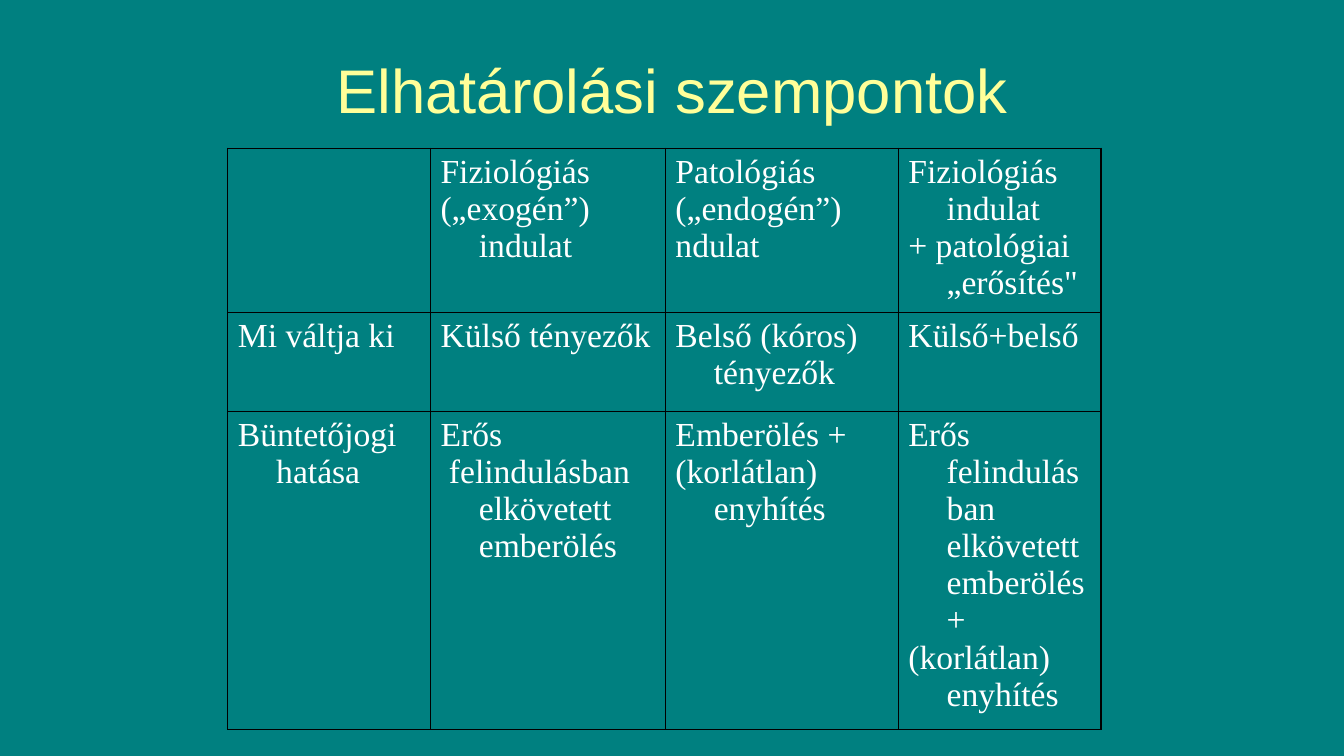
from lxml.etree import SubElement
from pptx import Presentation
from pptx.dml.color import RGBColor
from pptx.enum.text import MSO_ANCHOR, PP_ALIGN
from pptx.oxml.ns import qn
from pptx.util import Inches, Pt

TEAL = RGBColor(0x00, 0x80, 0x80)
YELLOW = RGBColor(0xFF, 0xFF, 0x99)
WHITE = RGBColor(0xFF, 0xFF, 0xFF)
BLACK = RGBColor(0x00, 0x00, 0x00)

# Content: each cell is a list of paragraphs
TITLE = "Elhatárolási szempontok"
ROWS = [
    [
        [],
        ["Fiziológiás", "(„exogén”) indulat"],
        ["Patológiás", "(„endogén”)", "ndulat"],
        ["Fiziológiás indulat", "+ patológiai „erősítés\""],
    ],
    [
        ["Mi váltja ki"],
        ["Külső tényezők"],
        ["Belső (kóros) tényezők"],
        ["Külső+belső"],
    ],
    [
        ["Büntetőjogi hatása"],
        ["Erős", " felindulásban elkövetett emberölés"],
        ["Emberölés +", "(korlátlan) enyhítés"],
        ["Erős felindulásban elkövetett emberölés +", "(korlátlan) enyhítés"],
    ],
]

# Layout in inches
SLIDE_SIZE = (13.33, 7.5)
TITLE_BOX = (2.17, 0.3, 9, 1.17)
TABLE_CORNER = (2.26, 1.47)
COLUMN_WIDTHS = [2.01, 2.33, 2.31, 2.01]
ROW_HEIGHTS = [1.63, 0.98, 3.16]
HANGING_INDENT = Inches(0.38)

TITLE_FONT = {"name": "Arial", "size": Pt(44)}
CELL_FONT = {"name": "Times New Roman", "size": Pt(24)}


def set_font(font, formats, color):
    for name, value in formats.items():
        setattr(font, name, value)
    font.color.rgb = color


def add_borders(cell):
    properties = cell._tc.get_or_add_tcPr()
    for position, side in enumerate(("lnL", "lnR", "lnT", "lnB")):
        line = SubElement(properties, qn(f"a:{side}"), w=str(Pt(1)))
        fill = SubElement(line, qn("a:solidFill"))
        SubElement(fill, qn("a:srgbClr"), val=str(BLACK))
        properties.insert(position, line)


def fill_cell(cell, texts):
    cell.fill.background()
    add_borders(cell)
    frame = cell.text_frame
    frame.text = "\n".join(texts)
    for paragraph in frame.paragraphs:
        set_font(paragraph.font, CELL_FONT, WHITE)
        properties = paragraph._p.get_or_add_pPr()
        properties.set("marL", str(HANGING_INDENT))
        properties.set("indent", str(-HANGING_INDENT))
        for run in paragraph.runs:
            set_font(run.font, CELL_FONT, WHITE)


def add_title(slide):
    frame = slide.shapes.add_textbox(*map(Inches, TITLE_BOX)).text_frame
    frame.word_wrap = True
    frame.vertical_anchor = MSO_ANCHOR.MIDDLE
    paragraph = frame.paragraphs[0]
    paragraph.alignment = PP_ALIGN.CENTER
    run = paragraph.add_run()
    run.text = TITLE
    set_font(run.font, TITLE_FONT, YELLOW)


def add_comparison_table(slide):
    size = (sum(COLUMN_WIDTHS), sum(ROW_HEIGHTS))
    table = slide.shapes.add_table(
        len(ROWS), len(COLUMN_WIDTHS), *map(Inches, TABLE_CORNER + size)
    ).table
    table.first_row = False
    table.horz_banding = False
    for column, width in zip(table.columns, COLUMN_WIDTHS):
        column.width = Inches(width)
    for row, height, contents in zip(table.rows, ROW_HEIGHTS, ROWS):
        row.height = Inches(height)
        for cell, texts in zip(row.cells, contents):
            fill_cell(cell, texts)


def main():
    presentation = Presentation()
    presentation.slide_width, presentation.slide_height = map(Inches, SLIDE_SIZE)
    slide = presentation.slides.add_slide(presentation.slide_layouts[6])
    slide.background.fill.solid()
    slide.background.fill.fore_color.rgb = TEAL
    add_comparison_table(slide)
    add_title(slide)
    presentation.save("out.pptx")


if __name__ == "__main__":
    main()
